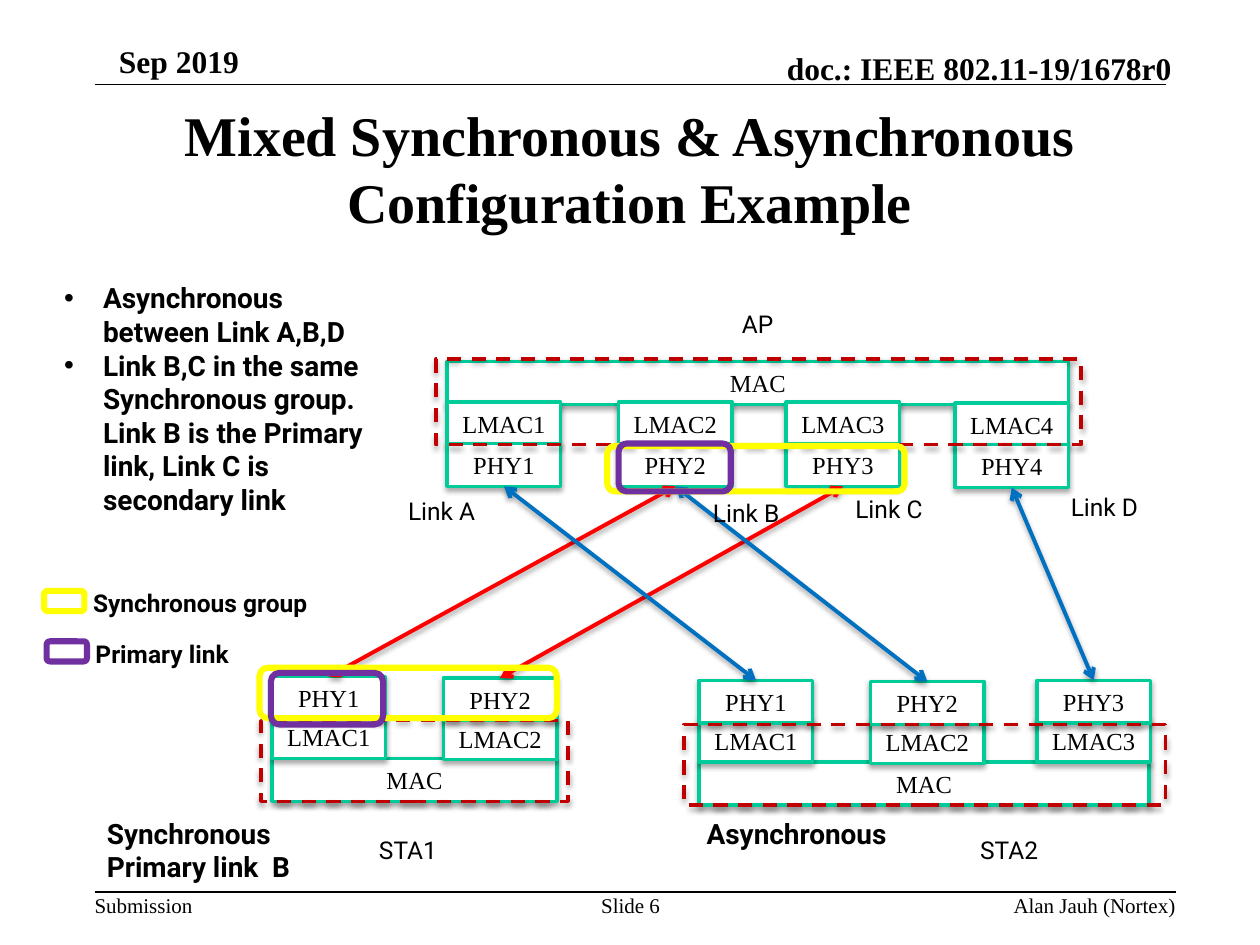
from lxml.etree import SubElement
from pptx import Presentation
from pptx.dml.color import RGBColor
from pptx.enum.dml import MSO_LINE_DASH_STYLE as Dash
from pptx.enum.shapes import MSO_CONNECTOR as Connector, MSO_SHAPE as Shape
from pptx.enum.text import MSO_ANCHOR as Anchor, PP_ALIGN as Align
from pptx.oxml.ns import qn
from pptx.util import Inches, Pt

SERIF, SANS = "Times New Roman", "Roboto"
BLACK, WHITE, GREEN = "000000", "FFFFFF", "00CC99"
RED, BLUE, DARK_RED = "FF0000", "0070C0", "C00000"
YELLOW, PURPLE = "FFFF00", "7030A0"
BLOCK_WIDTH, BLOCK_HEIGHT = 0.9, 0.34


def color(value):
    """Turn a hex string into a colour."""
    return RGBColor.from_string(value)


def inches(*lengths):
    """Turn numbers into lengths in inches."""
    return [Inches(length) for length in lengths]


def set_effects(shape, shadow):
    """Give a shape a soft downward shadow, or none at all."""
    properties = shape._element.spPr
    for old in properties.findall(qn("a:effectLst")):
        properties.remove(old)
    effects = SubElement(properties, qn("a:effectLst"))
    if shadow:
        outer = SubElement(effects, qn("a:outerShdw"), blurRad=str(Pt(3)),
                           dist=str(Pt(1.8)), dir="5400000", rotWithShape="0")
        tone = SubElement(outer, qn("a:srgbClr"), val=BLACK)
        SubElement(tone, qn("a:alpha"), val="35000")


def write(shape, lines, size, font=SERIF, bold=False, align=Align.LEFT,
          anchor=Anchor.TOP, inset=(0.1, 0.05), wrap=True):
    """Fill a shape with paragraphs of one format."""
    frame = shape.text_frame
    horizontal, vertical = inches(*inset)
    frame_format = {
        "word_wrap": wrap, "vertical_anchor": anchor,
        "margin_left": horizontal, "margin_right": horizontal,
        "margin_top": vertical, "margin_bottom": vertical,
    }
    for name, value in frame_format.items():
        setattr(frame, name, value)
    font_format = {"name": font, "size": Pt(size), "bold": bold}
    for index, line in enumerate(lines):
        paragraph = frame.add_paragraph() if index else frame.paragraphs[0]
        paragraph.alignment = align
        run = paragraph.add_run()
        run.text = line
        for name, value in font_format.items():
            setattr(run.font, name, value)
        run.font.color.rgb = color(BLACK)


def add_text(slide, box, lines, size, **options):
    """Add a text box."""
    shape = slide.shapes.add_textbox(*inches(*box))
    write(shape, lines, size, **options)
    return shape


def add_outline(slide, box, line, width=2, kind=Shape.RECTANGLE, fill=None,
                dash=None, shadow=True):
    """Add an outlined shape, hollow unless it has a fill."""
    shape = slide.shapes.add_shape(kind, *inches(*box))
    if fill:
        shape.fill.solid()
        shape.fill.fore_color.rgb = color(fill)
    else:
        shape.fill.background()
    shape.line.color.rgb = color(line)
    shape.line.width = Pt(width)
    if dash:
        shape.line.dash_style = dash
    set_effects(shape, shadow)
    return shape


def add_block(slide, box, label):
    """Add a labelled layer block."""
    shape = add_outline(slide, box, GREEN, fill=WHITE)
    write(shape, [label], 14, align=Align.CENTER, anchor=Anchor.MIDDLE,
          inset=(0.05, 0.05))
    return shape


def add_line(slide, ends, line, width, shadow=False):
    """Add a straight line."""
    connector = slide.shapes.add_connector(Connector.STRAIGHT, *inches(*ends))
    connector.line.color.rgb = color(line)
    connector.line.width = Pt(width)
    set_effects(connector, shadow)
    return connector


def add_link(slide, upper, lower, line):
    """Join the bottom of one block to the top of another with arrows."""
    connector = add_line(slide, (0, 0, 1, 1), line, 2.25, shadow=True)
    connector.begin_connect(upper, 2)
    connector.end_connect(lower, 0)
    outline = connector.line._get_or_add_ln()
    for end in ("a:headEnd", "a:tailEnd"):
        SubElement(outline, qn(end), type="arrow")


def add_device(slide, box, columns, layer_offsets, frame):
    """Add a MAC bar with its LMAC and PHY columns; return the PHY blocks."""
    left, top, _, _ = box
    add_block(slide, box, "MAC")
    layers = {}
    for layer, offset in zip(("LMAC", "PHY"), layer_offsets):
        layers[layer] = [
            add_block(slide, (left + across, top + offset + nudge,
                              BLOCK_WIDTH, BLOCK_HEIGHT), f"{layer}{number}")
            for number, (across, nudge) in enumerate(columns, 1)]
    add_outline(slide, frame, DARK_RED, dash=Dash.DASH)
    return layers["PHY"]


def add_highlight(slide, box, line):
    """Add a rounded marker around blocks."""
    add_outline(slide, box, line, width=3.5, kind=Shape.ROUNDED_RECTANGLE,
                shadow=False)


def add_header(slide, left, top, width):
    """Add the date, document number, rule and title."""
    add_line(slide, (left, top + 0.38, left + width, top + 0.38), BLACK, 1)
    common = {"bold": True, "inset": (0, 0)}
    add_text(slide, (left, top, 1.34, 0.38), ["Sep 2019"], 18,
             align=Align.CENTER, anchor=Anchor.MIDDLE, **common)
    add_text(slide, (left + 4.72, top + 0.1, 3.83, 0.3),
             ["doc.: IEEE 802.11-19/1678r0"], 18,
             align=Align.RIGHT, anchor=Anchor.BOTTOM, **common)
    add_text(slide, (left, top + 0.46, width, 1.16),
             ["Mixed Synchronous & Asynchronous Configuration Example"], 32,
             bold=True, align=Align.CENTER, anchor=Anchor.MIDDLE)


def add_footer(slide, left, top, width):
    """Add the rule and the three footer texts."""
    add_line(slide, (left, top, left + width, top), BLACK, 1)
    for across, size, label, align in (
            (0, 0.78, "Submission", Align.LEFT),
            (3.82, 0.87, "Slide 6", Align.CENTER),
            (width - 3.48, 3.48, "Alan Jauh (Nortex)", Align.RIGHT)):
        add_text(slide, (left + across, top, size, 0.2), [label], 12,
                 align=align, inset=(0, 0), wrap=False if across == 0 else True)


def add_bullets(slide, box):
    """Add the bulleted remarks."""
    shape = add_text(slide, box, [
        "Asynchronous between Link A,B,D",
        "Link B,C in the same Synchronous group. Link B is the Primary link, "
        "Link C is secondary link"], 16, font=SANS, bold=True)
    for paragraph in shape.text_frame.paragraphs:
        properties = paragraph._p.get_or_add_pPr()
        properties.set("marL", str(Inches(0.31)))
        properties.set("indent", str(-Inches(0.31)))
        SubElement(properties, qn("a:buFont"), typeface="Arial")
        SubElement(properties, qn("a:buChar"), char="•")


def add_legend(slide, left, top):
    """Add the key to the highlight colours."""
    for across, down, line, label in ((0, 0, YELLOW, "Synchronous group"),
                                      (0.02, 0.4, PURPLE, "Primary link")):
        add_highlight(slide, (left + across, top + down, 0.32, 0.16), line)
        add_text(slide, (left + 0.29 + across, top + down - 0.07, 2.16, 0.34),
                 [label], 14, font=SANS, bold=True)


def add_diagram(slide):
    """Add the access point, both stations and the links between them."""
    access_point = add_device(
        slide, (3.55, 2.87, 4.93, 0.34),
        [(0, 0), (1.36, 0), (2.69, 0), (4.03, 0.01)], (0.32, 0.65),
        (3.46, 2.85, 5.12, 0.68))
    station1 = add_device(
        slide, (2.16, 6.02, 2.26, 0.34), [(0, 0), (1.36, 0.01)],
        (-0.34, -0.65), (2.07, 5.72, 2.44, 0.64))
    station2 = add_device(
        slide, (5.55, 6.05, 3.57, 0.34), [(0, 0), (1.36, 0.01), (2.68, 0)],
        (-0.34, -0.65), (5.43, 5.75, 3.82, 0.64))
    for upper, lower, line in ((1, station1[0], RED), (2, station1[1], RED),
                               (0, station2[0], BLUE), (1, station2[1], BLUE),
                               (3, station2[2], BLUE)):
        add_link(slide, access_point[upper], lower, line)
    for left, top, label in ((5.79, 2.4, "AP"), (2.91, 6.58, "STA1"),
                             (7.68, 6.58, "STA2"), (3.14, 3.89, "Link A"),
                             (5.56, 3.9, "Link B"), (6.69, 3.87, "Link C"),
                             (8.4, 3.86, "Link D")):
        add_text(slide, (left, top, 0.86, 0.34), [label], 14, font=SANS)
    for left, lines in ((0.75, ["Synchronous", "Primary link  B"]),
                        (5.51, ["Asynchronous"])):
        add_text(slide, (left, 6.43, 2.29, 0.64), lines, 16, font=SANS,
                 bold=True)
    for box, line in (((4.82, 3.54, 2.36, 0.36), YELLOW),
                      ((4.91, 3.52, 0.89, 0.38), PURPLE),
                      ((2.06, 5.3, 2.36, 0.4), YELLOW),
                      ((2.15, 5.34, 0.89, 0.41), PURPLE)):
        add_highlight(slide, box, line)


def main():
    """Build and save the presentation."""
    presentation = Presentation()
    presentation.slide_width, presentation.slide_height = inches(10, 7.5)
    slide = presentation.slides.add_slide(presentation.slide_layouts[6])
    add_header(slide, 0.75, 0.29, 8.5)
    add_footer(slide, 0.75, 7.08, 8.58)
    add_diagram(slide)
    add_bullets(slide, (0.41, 2.18, 2.78, 1.99))
    add_legend(slide, 0.35, 4.69)
    presentation.save("out.pptx")


if __name__ == "__main__":
    main()
